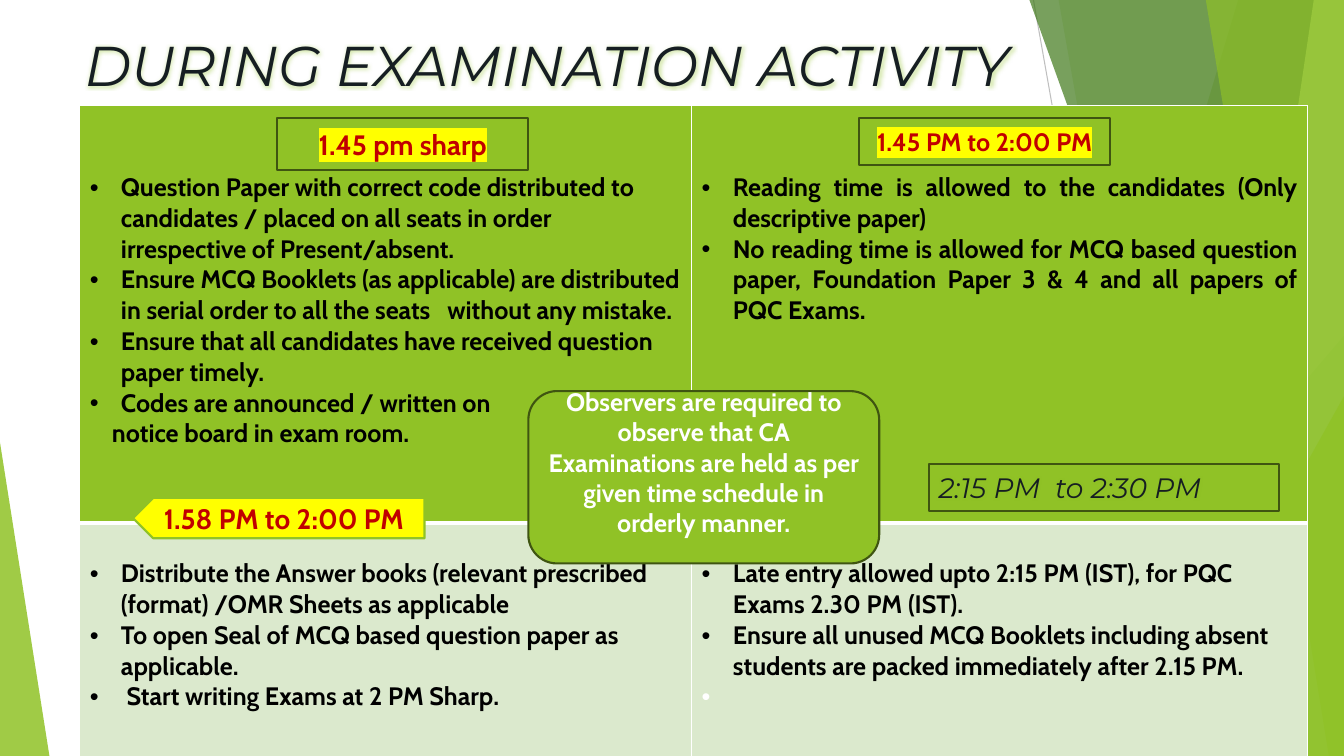
"""Build the examination activity slide with its schedule table and callouts."""
import pptx
import pptx.dml.color
import pptx.enum.shapes
import pptx.enum.text
import pptx.oxml
import pptx.oxml.ns
import pptx.util

Inches = pptx.util.Inches
Pt = pptx.util.Pt
SHAPE = pptx.enum.shapes.MSO_SHAPE
ALIGN = pptx.enum.text.PP_ALIGN
MIDDLE = pptx.enum.text.MSO_ANCHOR.MIDDLE
qn = pptx.oxml.ns.qn
NS = 'xmlns:a="http://schemas.openxmlformats.org/drawingml/2006/main"'

GREEN, OLIVE, PALE, LIME = "90C226", "3F5511", "DBE9CD", "C0E474"
YELLOW, RED, INK, BLACK, WHITE = "FFFF00", "C00000", "161E22", "000000", "FFFFFF"


def rgb(value):
    return pptx.dml.color.RGBColor.from_string(value)


def xml(tag, attrs="", inner=""):
    return pptx.oxml.parse_xml(f"<a:{tag} {NS} {attrs}>{inner}</a:{tag}>")


def color_xml(value, inner=""):
    return f'<a:srgbClr val="{value}">{inner}</a:srgbClr>'


def apply(obj, values):
    for name, value in values.items():
        setattr(obj, name, value)


class SlideBuilder:
    body = {"name": "Cabin", "size": Pt(18), "bold": True, "italic": False}
    label = {**body, "size": Pt(20)}
    display = {"name": "Montserrat", "size": Pt(20), "bold": False, "italic": True}
    heading = {**display, "size": Pt(40)}

    def __init__(self, prs):
        self.s = prs.slides.add_slide(prs.slide_layouts[5])

    def run(self, p, text, font, color, highlight=None, glow=False):
        r = p.add_run()
        r.text = text
        apply(r.font, font)
        r.font.color.rgb = rgb(color)
        fill = r.font.fill._xPr.find(qn("a:solidFill"))
        if highlight:
            fill.addnext(xml("highlight", "", color_xml(highlight)))
        if glow:
            halo = color_xml(GREEN, '<a:alpha val="40000"/>')
            fill.addnext(xml("effectLst", "", f'<a:glow rad="63500">{halo}</a:glow>'))

    def paint(self, sp, fill, opacity=100, line=None):
        sp.shadow.inherit = False
        sp.fill.solid()
        sp.fill.fore_color.rgb = rgb(fill)
        if opacity < 100:
            clr = sp.element.spPr.find(qn("a:solidFill"))[0]
            clr.append(xml("alpha", f'val="{opacity * 1000}"'))
        if line:
            sp.line.color.rgb = rgb(line)
            sp.line.width = Pt(1.5)
        else:
            sp.line.fill.background()

    def title(self, text):
        sp = self.s.shapes.title
        box = (0.74, 0.24, 11.82, 0.8)
        apply(sp, dict(zip(("left", "top", "width", "height"), map(Inches, box))))
        apply(sp.text_frame, {"vertical_anchor": MIDDLE, "word_wrap": True,
                              "auto_size": pptx.enum.text.MSO_AUTO_SIZE.NONE})
        p = sp.text_frame.paragraphs[0]
        p.alignment = ALIGN.LEFT
        self.run(p, text, self.heading, INK, glow=True)
        sp.element.getparent().append(sp.element)

    def line(self, start, end, color):
        c = self.s.shapes.add_connector(pptx.enum.shapes.MSO_CONNECTOR.STRAIGHT,
                                        *map(Inches, start + end))
        c.line.color.rgb = rgb(color)
        c.line.width = Pt(0.75)
        c.element.spPr.append(xml("effectLst"))

    def facet(self, top_left, bottom_left, color, opacity):
        right, bottom = Inches(13.33), Inches(7.5)
        fb = self.s.shapes.build_freeform(Inches(top_left), 0)
        fb.add_line_segments([(right, 0), (right, bottom),
                              (Inches(bottom_left), bottom)], close=True)
        self.paint(fb.convert_to_shape(), color, opacity)

    def triangle(self, box, apex, color, opacity):
        sp = self.s.shapes.add_shape(SHAPE.ISOSCELES_TRIANGLE, *map(Inches, box))
        sp.adjustments[0] = apex
        self.paint(sp, color, opacity)

    def callout(self, kind, box, text, font, color, fill=GREEN, line=OLIVE,
                align=ALIGN.CENTER, flip=False, margins=None, **effects):
        sp = self.s.shapes.add_shape(kind, *map(Inches, box))
        self.paint(sp, fill, line=line)
        if flip:
            sp.element.spPr.find(qn("a:xfrm")).set("flipH", "1")
        tf = sp.text_frame
        apply(tf, {"word_wrap": True, "vertical_anchor": MIDDLE, **(margins or {})})
        p = tf.paragraphs[0]
        p.alignment = align
        self.run(p, text, font, color, **effects)

    def cell(self, cell, items, fill, top, bottom_line, align):
        tcPr = cell._tc.get_or_add_tcPr()
        for side, width in (("L", 1), ("R", 1), ("T", 1), ("B", bottom_line)):
            tcPr.append(xml(f"ln{side}", f'w="{Pt(width)}"',
                            f"<a:solidFill>{color_xml(WHITE)}</a:solidFill>"))
        cell.fill.solid()
        cell.fill.fore_color.rgb = rgb(fill)
        cell.margin_top = Inches(top)
        for i, (text, bullet, color) in enumerate(items):
            tf = cell.text_frame
            p = tf.paragraphs[0] if i == 0 else tf.add_paragraph()
            p.alignment = align
            pPr = p._p.get_or_add_pPr()
            pPr.set("marL", str(Inches(0.31 if bullet else 0.22)))
            pPr.set("indent", str(Inches(-0.31 if bullet else 0)))
            if bullet:
                pPr.append(xml("buFont", 'typeface="Arial"'))
                pPr.append(xml("buChar", 'char="•"'))
            self.run(p, text, self.body, color)

    def table(self, rows, widths, heights):
        frame = self.s.shapes.add_table(2, 2, Inches(0.79), Inches(1.05),
                                        Inches(sum(widths)), Inches(sum(heights)))
        t = frame.table
        for col, width in zip(t.columns, widths):
            col.width = Inches(width)
        for row, height in zip(t.rows, heights):
            row.height = Inches(height)
        styles = ((GREEN, 0.66, 3), (PALE, 0.35, 1))
        for i, (row, style) in enumerate(zip(rows, styles)):
            for j, items in enumerate(row):
                align = ALIGN.JUSTIFY if (i, j) == (0, 1) else ALIGN.LEFT
                self.cell(t.cell(i, j), items, *style, align)


def bullets(*texts):
    return [(text, True, BLACK) for text in texts]


def main():
    prs = pptx.Presentation()
    prs.slide_width, prs.slide_height = Inches(13.33), Inches(7.5)
    b = SlideBuilder(prs)

    b.line((10.25, 0), (11.58, 7.5), "BFBFBF")
    b.line((13.33, 4.03), (8.12, 7.5), "D9D9D9")
    b.facet(12.28, 10.04, GREEN, 30)
    b.facet(10.5, 11.83, GREEN, 20)
    b.triangle((9.77, 3.33, 3.56, 4.17), 1, "54A021", 72)
    b.facet(10.21, 12.91, "3F7819", 70)
    b.facet(13.03, 11.92, LIME, 70)
    b.facet(11.96, 13.18, GREEN, 65)
    b.triangle((11.34, 3.93, 1.99, 3.57), 1, GREEN, 80)
    b.triangle((0, 4.39, 0.49, 3.11), 0, GREEN, 85)
    b.title("DURING EXAMINATION ACTIVITY")

    before_start = bullets(
        "Question Paper with correct code distributed to candidates / placed on all "
        "seats in order irrespective of Present/absent.",
        "Ensure MCQ Booklets (as applicable) are distributed in serial order to all "
        "the seats   without any mistake.",
        "Ensure that all candidates have received question paper timely.",
        "Codes are announced / written on",
    ) + [("notice board in exam room.", False, BLACK)]
    reading_time = bullets(
        "Reading time is allowed to the candidates (Only descriptive paper)",
        "No reading time is allowed for MCQ based question paper, Foundation Paper "
        "3 & 4 and all papers of PQC Exams.")
    distribution = bullets(
        "Distribute the Answer books (relevant prescribed (format) /OMR Sheets as "
        "applicable",
        "To open Seal of MCQ based question paper as applicable.",
        " Start writing Exams at 2 PM Sharp.")
    late_entry = bullets(
        "Late entry allowed upto 2:15 PM (IST), for PQC Exams 2.30 PM (IST).",
        "Ensure all unused MCQ Booklets including absent students are packed "
        "immediately after 2.15 PM.") + [(" ", True, WHITE)]
    b.table(((before_start, reading_time), (distribution, late_entry)),
            (6.07, 6.11), (4.14, 2.59))

    b.callout(SHAPE.RECTANGLE, (2.75, 1.17, 2.49, 0.52), "1.45 pm sharp",
              b.label, RED, highlight=YELLOW)
    b.callout(SHAPE.RECTANGLE, (8.52, 1.17, 2.49, 0.47), "1.45 PM to 2:00 PM",
              b.body, RED, highlight=YELLOW)
    b.callout(SHAPE.PENTAGON, (1.32, 4.94, 2.89, 0.4), "1.58 PM to 2:00 PM",
              b.label, RED, fill=YELLOW, line=GREEN, flip=True)
    b.callout(SHAPE.RECTANGLE, (9.21, 4.6, 3.48, 0.47), "2:15 PM  to 2:30 PM",
              b.display, INK, align=ALIGN.LEFT, glow=True)
    b.callout(SHAPE.ROUNDED_RECTANGLE, (5.24, 3.88, 3.48, 1.71),
              "Observers are required to observe that CA Examinations are held as per "
              "given time schedule in orderly manner.", b.body, WHITE,
              margins={"margin_top": 0, "margin_bottom": Inches(0.3)})
    prs.save("out.pptx")


if __name__ == "__main__":
    main()
